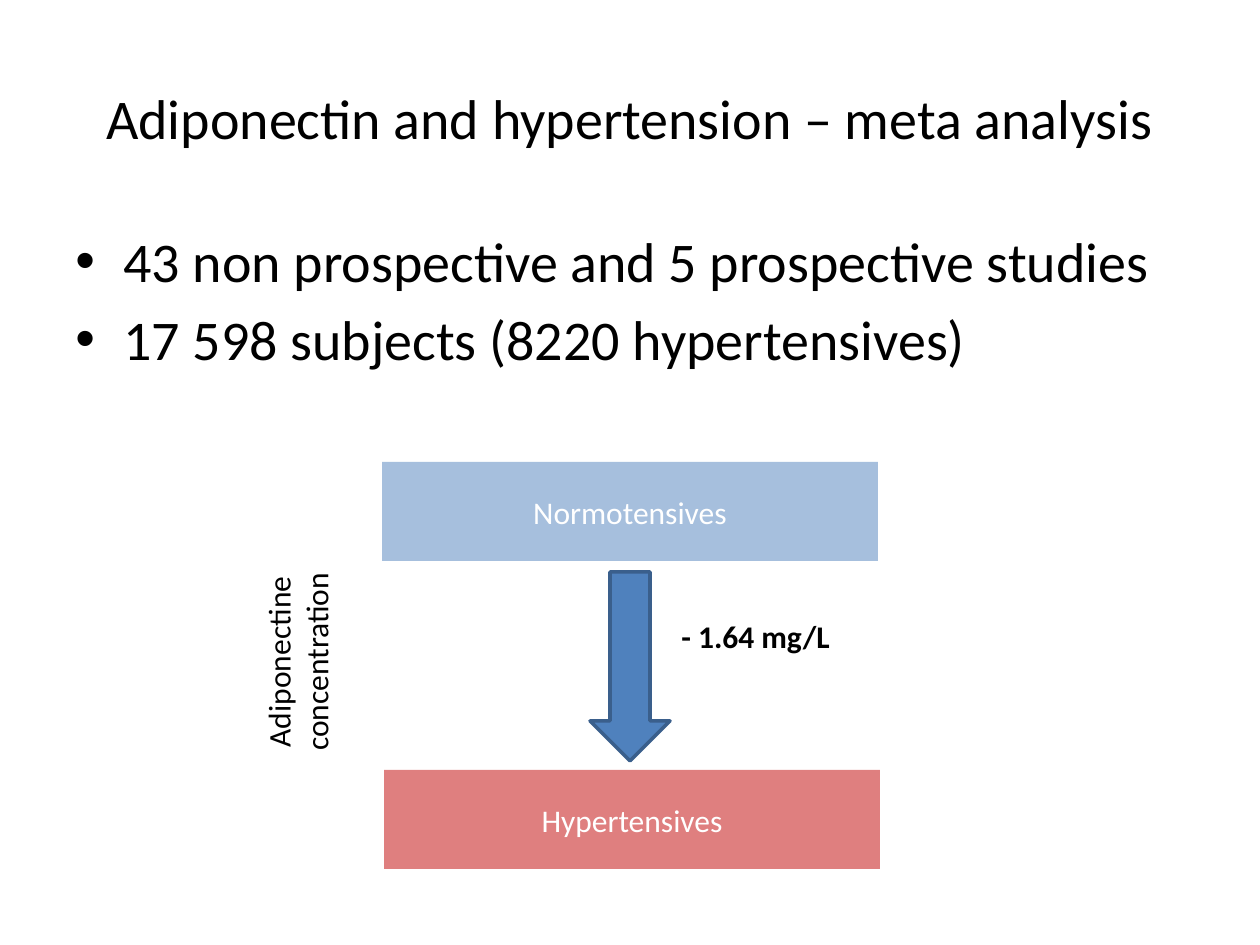
"""Build a slide on adiponectin levels in hypertension."""
from dataclasses import dataclass

from lxml import etree
from pptx import Presentation
from pptx import util as u
from pptx.dml.color import RGBColor
from pptx.enum import shapes, text
from pptx.oxml import ns

SCALE = 914400 / 126


@dataclass(frozen=True)
class Theme:
    face: str = "Calibri"
    ink: str = "000000"
    white: str = "FFFFFF"
    blue: str = "4F81BD"
    edge: str = "3A5F8C"
    red: str = "C00000"
    head: int = 32
    body: int = 18
    gap: float = 6.4
    inset: int = 48


def px(num):
    return u.Emu(round(num * SCALE))


def apply(item, vals):
    for key, val in vals.items():
        setattr(item, key, val)


class Deck:
    def __init__(self, theme, wide, high):
        self.theme = theme
        self.file = Presentation()
        apply(self.file, {"slide_width": px(wide), "slide_height": px(high)})
        self.slide = self.file.slides.add_slide(self.file.slide_layouts[6])

    def fill_text(self, shape, lines, size, color, align, **frame):
        body = shape.text_frame
        apply(body, {"word_wrap": True, **frame})
        body.text = "\n".join(lines)
        for para in body.paragraphs:
            para.alignment = align
            font = para.runs[0].font
            apply(font, {"name": self.theme.face, "size": u.Pt(size)})
            font.color.rgb = RGBColor.from_string(color)
        return body

    def label(self, box, lines, size, align=text.PP_ALIGN.LEFT, **frame):
        shape = self.slide.shapes.add_textbox(*map(px, box))
        return self.fill_text(shape, lines, size, self.theme.ink, align, **frame)

    def bullets(self, box, lines):
        body = self.label(box, lines, self.theme.head)
        inset = px(self.theme.inset)
        for para in body.paragraphs:
            para.space_before = u.Pt(self.theme.gap)
            props = para._p.get_or_add_pPr()
            props.set("marL", str(inset))
            props.set("indent", str(-inset))
            font = etree.SubElement(props, ns.qn("a:buFont"))
            font.set("typeface", "Arial")
            mark = etree.SubElement(props, ns.qn("a:buChar"))
            mark.set("char", "•")

    def block(self, kind, box, color):
        shape = self.slide.shapes.add_shape(kind, *map(px, box))
        shape.shadow.inherit = False
        shape.fill.solid()
        shape.fill.fore_color.rgb = RGBColor.from_string(color)
        return shape

    def group(self, box, name, color):
        shape = self.block(shapes.MSO_SHAPE.RECTANGLE, box, color)
        shape.line.fill.background()
        tint = shape._element.spPr.find(".//" + ns.qn("a:srgbClr"))
        etree.SubElement(tint, ns.qn("a:alpha")).set("val", "50000")
        self.fill_text(shape, [name], self.theme.body, self.theme.white,
                       text.PP_ALIGN.CENTER, vertical_anchor=text.MSO_ANCHOR.MIDDLE)

    def arrow(self, box):
        shape = self.block(shapes.MSO_SHAPE.DOWN_ARROW, box, self.theme.blue)
        shape.line.color.rgb = RGBColor.from_string(self.theme.edge)
        shape.line.width = u.Pt(2)


def main():
    theme = Theme()
    deck = Deck(theme, 1260, 945)
    mid = text.PP_ALIGN.CENTER
    grow = text.MSO_AUTO_SIZE.SHAPE_TO_FIT_TEXT
    deck.label((63, 38, 1134, 158), ["Adiponectin and hypertension – meta analysis"],
               theme.head, mid, vertical_anchor=text.MSO_ANCHOR.MIDDLE)
    deck.bullets((63, 220, 1134, 624), ["43 non prospective and 5 prospective studies",
                                        "17 598 subjects (8220 hypertensives)"])
    deck.group((382, 462, 496, 99), "Normotensives", theme.blue)
    deck.group((384, 770, 496, 99), "Hypertensives", theme.red)
    deck.arrow((590, 572, 80, 189))
    change = deck.label((669, 611, 179, 50), ["- 1.64 mg/L"], theme.body, auto_size=grow)
    change.paragraphs[0].runs[0].font.bold = True
    axis = deck.label((253, 493, 102, 338), ["Adiponectine concentration"],
                      theme.body, mid, auto_size=grow)
    axis._txBody.bodyPr.set("vert", "vert270")
    deck.file.save("out.pptx")


if __name__ == "__main__":
    main()
